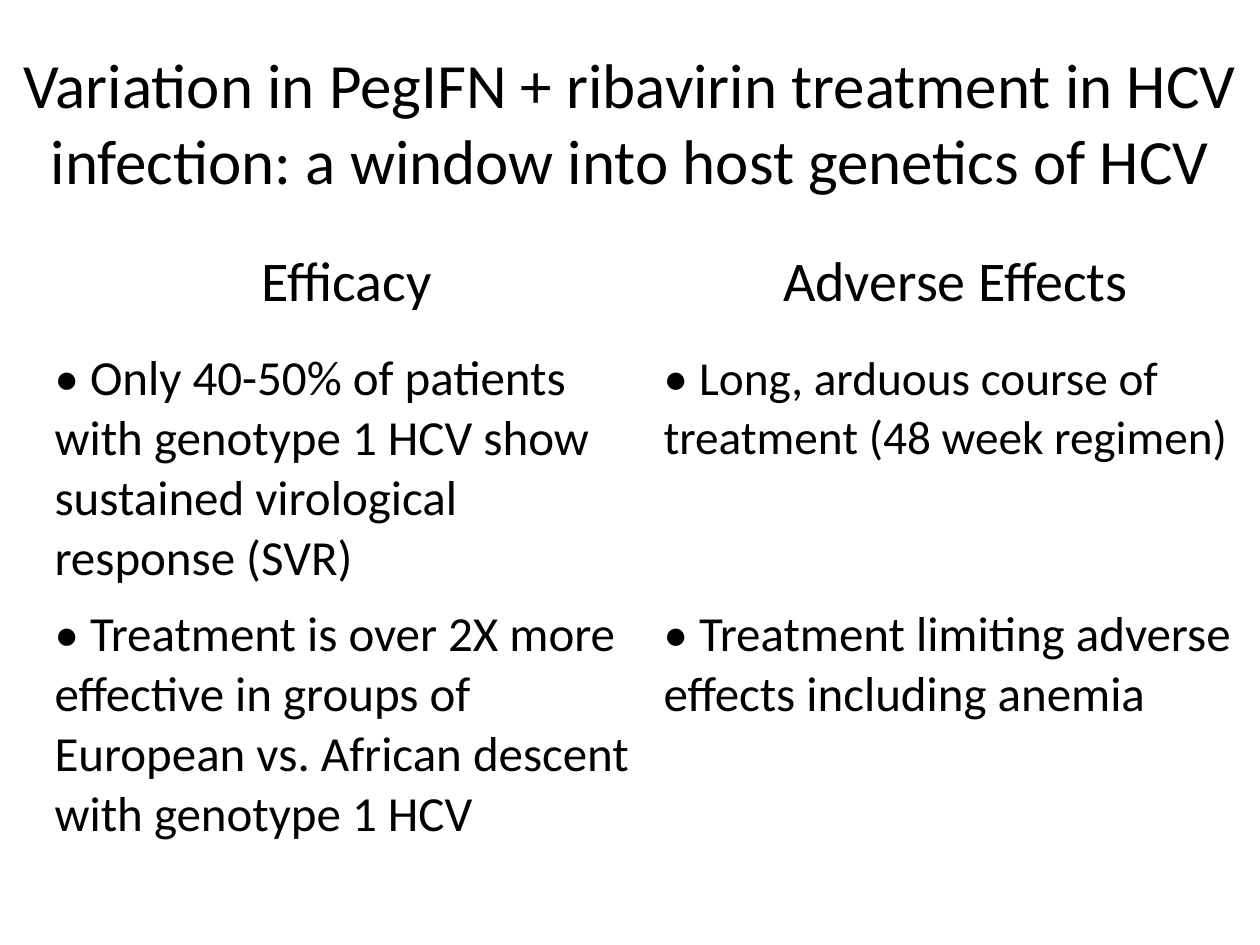
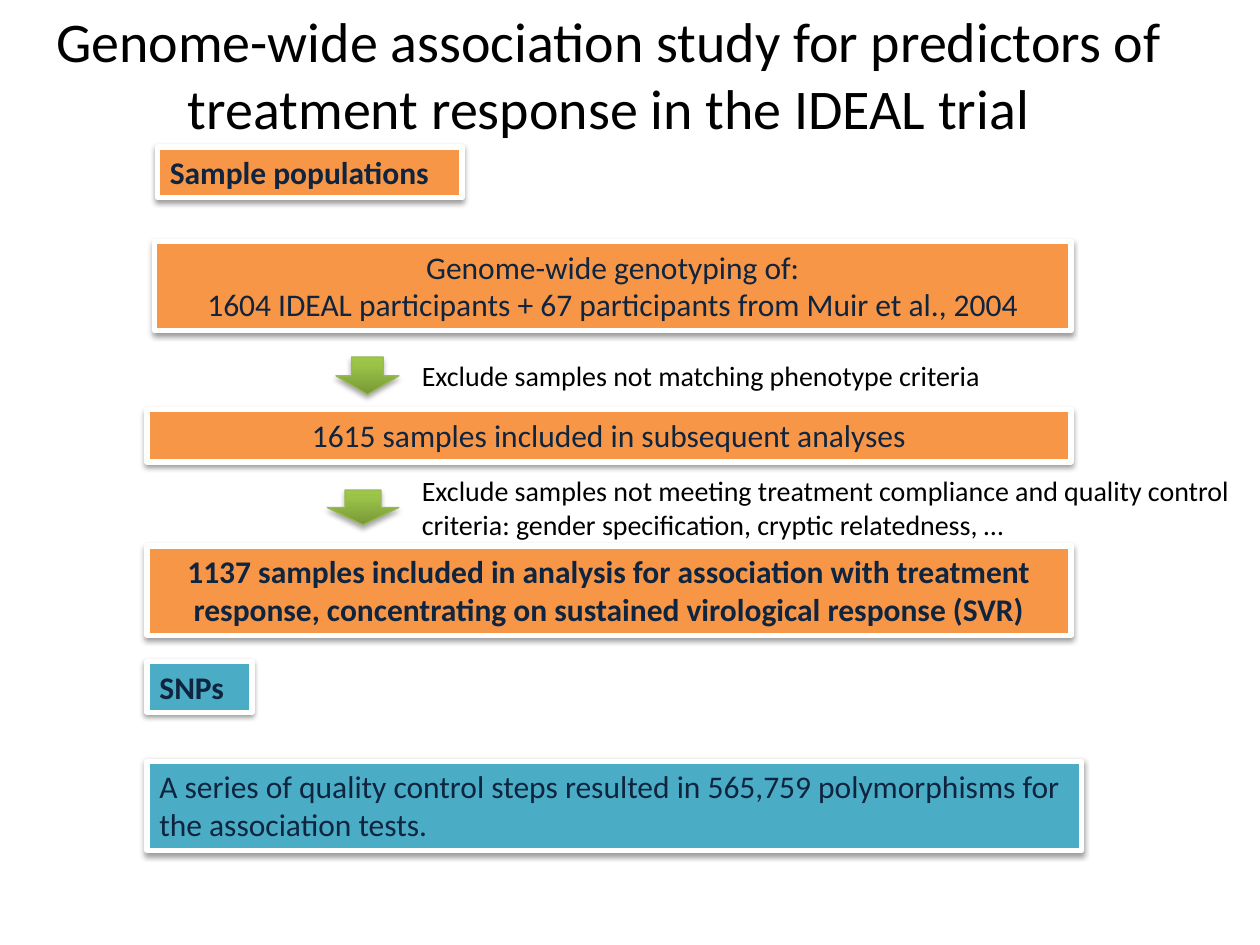
import copy
from typing import NamedTuple

import lxml.etree
import pptx
import pptx.dml.color
import pptx.enum.shapes
import pptx.enum.text
import pptx.oxml.ns
import pptx.util
from pptx.util import Pt

FONT = "Calibri"
BLACK, WHITE, NAVY = "000000", "FFFFFF", "0F243E"
ORANGE, TEAL = "F79646", "4BACC6"
ARROW_LINE = "98B955"
ARROW_STOPS = ((0, "779737"), (0.8, "9BC348"), (1, "9DC746"))

LEFT = pptx.enum.text.PP_ALIGN.LEFT
CENTER = pptx.enum.text.PP_ALIGN.CENTER
RECTANGLE = pptx.enum.shapes.MSO_SHAPE.RECTANGLE
DOWN_ARROW = pptx.enum.shapes.MSO_SHAPE.DOWN_ARROW


class Area(NamedTuple):
    left: float
    top: float
    width: float
    height: float

    def lengths(self) -> list[pptx.util.Length]:
        return [Pt(value) for value in self]


class Run(NamedTuple):
    text: str
    size: float
    color: str = BLACK
    bold: bool = False


class Box(NamedTuple):
    area: Area
    fill: str
    lines: tuple[str, ...]
    align: pptx.enum.text.PP_ALIGN = CENTER
    bold: bool = False


class Note(NamedTuple):
    area: Area
    text: str


TREATMENT_ROWS = (
    ([Run("• Only 40-50% of patients with genotype 1 HCV show sustained "
          "virological response (SVR)", 28)],
     [Run("• ", 28), Run("Long, arduous course of treatment (48 week regimen)", 27)]),
    ([Run("• Treatment is over 2X more effective in groups of European vs. "
          "African descent with genotype 1 HCV", 28)],
     [Run("• Treatment limiting adverse effects including anemia", 28)]),
)

STUDY_BOXES = (
    Box(Area(90, 84, 174, 29), ORANGE, ("Sample populations",), LEFT, True),
    Box(Area(88.5, 138, 523.5, 51), ORANGE,
        ("Genome-wide genotyping of:",
         "1604 IDEAL participants + 67 participants from Muir et al., 2004")),
    Box(Area(84, 234, 528, 30), ORANGE, ("1615 samples included in subsequent analyses",)),
    Box(Area(84, 312, 528, 51), ORANGE,
        ("1137 samples included in analysis for association with treatment response, "
         "concentrating on sustained virological response (SVR)",), bold=True),
    Box(Area(84, 378, 60, 29), TEAL, ("SNPs",), LEFT, True),
    Box(Area(84, 435, 534, 51), TEAL,
        ("A series of quality control steps resulted in 565,759 polymorphisms "
         "for the association tests.",), LEFT),
)

EXCLUSION_ARROWS = (Area(192, 204, 36, 21.5), Area(187, 280, 41, 20))
EXCLUSION_NOTES = (
    Note(Area(234, 201.5, 396, 27), "Exclude samples not matching phenotype criteria"),
    Note(Area(234, 267, 486, 46),
         "Exclude samples not meeting treatment compliance and quality control "
         "criteria: gender specification, cryptic relatedness, …"),
)


def rgb(color: str) -> pptx.dml.color.RGBColor:
    return pptx.dml.color.RGBColor.from_string(color)


def write_paragraphs(text_frame, paragraphs: list[list[Run]], align) -> None:
    text_frame.word_wrap = True
    text_frame.vertical_anchor = pptx.enum.text.MSO_ANCHOR.TOP
    for index, runs in enumerate(paragraphs):
        paragraph = text_frame.add_paragraph() if index else text_frame.paragraphs[0]
        paragraph.alignment = align
        for item in runs:
            run = paragraph.add_run()
            run.text = item.text
            run.font.name = FONT
            run.font.size = Pt(item.size)
            run.font.bold = item.bold
            run.font.color.rgb = rgb(item.color)


def add_text(slide, area: Area, text: str, size: float, align=LEFT) -> None:
    text_box = slide.shapes.add_textbox(*area.lengths())
    write_paragraphs(text_box.text_frame, [[Run(text, size)]], align)


def add_title(slide, area: Area, text: str, size: float) -> None:
    add_text(slide, area, text, size, CENTER)


def add_drop_shadow(shape, opacity: int, distance: float) -> None:
    """Cast a soft black shadow straight down; opacity is in percent."""
    shape.shadow.inherit = False
    qn = pptx.oxml.ns.qn
    effects = shape.element.spPr.find(qn("a:effectLst"))
    shadow = lxml.etree.SubElement(
        effects, qn("a:outerShdw"), blurRad=str(Pt(3.1)), dist=str(Pt(distance)),
        dir="5400000", rotWithShape="0")
    color = lxml.etree.SubElement(shadow, qn("a:srgbClr"), val=BLACK)
    lxml.etree.SubElement(color, qn("a:alpha"), val=str(opacity * 1000))


def add_outlined_shape(slide, kind, area: Area, line_color: str, line_width: float):
    shape = slide.shapes.add_shape(kind, *area.lengths())
    shape.line.color.rgb = rgb(line_color)
    shape.line.width = Pt(line_width)
    return shape


def add_box(slide, box: Box) -> None:
    shape = add_outlined_shape(slide, RECTANGLE, box.area, WHITE, 3)
    shape.fill.solid()
    shape.fill.fore_color.rgb = rgb(box.fill)
    add_drop_shadow(shape, 38, 1.6)
    paragraphs = [[Run(line, 18, NAVY, box.bold)] for line in box.lines]
    write_paragraphs(shape.text_frame, paragraphs, box.align)


def add_arrow(slide, area: Area) -> None:
    shape = add_outlined_shape(slide, DOWN_ARROW, area, ARROW_LINE, 0.75)
    shape.fill.gradient()
    shape.fill.gradient_angle = 90
    stop_list = shape.element.spPr.find(".//" + pptx.oxml.ns.qn("a:gsLst"))
    stop_list.append(copy.deepcopy(stop_list[0]))
    for stop, (position, color) in zip(shape.fill.gradient_stops, ARROW_STOPS):
        stop.position = position
        stop.color.rgb = rgb(color)
    add_drop_shadow(shape, 35, 1.8)


def add_treatment_table(slide) -> None:
    area = Area(24, 138, 696, 384)
    table = slide.shapes.add_table(3, 2, *area.lengths()).table
    table.first_row = False
    table.horz_banding = False
    for row, height in zip(table.rows, (58, 146, 180)):
        row.height = Pt(height)
    headings = ([Run("Efficacy", 32)], [Run("Adverse Effects", 32)])
    for row_index, row in enumerate((headings, *TREATMENT_ROWS)):
        for column_index, runs in enumerate(row):
            cell = table.cell(row_index, column_index)
            cell.fill.background()
            write_paragraphs(cell.text_frame, [runs], LEFT if row_index else CENTER)


def build_treatment_slide(slide) -> None:
    add_title(slide, Area(0, 22.5, 720, 116),
              "Variation in PegIFN + ribavirin treatment in HCV infection: "
              "a window into host genetics of HCV", 36)
    add_treatment_table(slide)


def build_study_slide(slide) -> None:
    add_title(slide, Area(-12, 0, 720, 72),
              "Genome-wide association study for predictors of treatment response "
              "in the IDEAL trial", 32)
    for box in STUDY_BOXES:
        add_box(slide, box)
    for area in EXCLUSION_ARROWS:
        add_arrow(slide, area)
    for note in EXCLUSION_NOTES:
        add_text(slide, note.area, note.text, 16)


def main() -> None:
    presentation = pptx.Presentation()
    presentation.slide_width = Pt(720)
    presentation.slide_height = Pt(540)
    blank_layout = presentation.slide_layouts[6]
    for build in (build_treatment_slide, build_study_slide):
        build(presentation.slides.add_slide(blank_layout))
    presentation.save("out.pptx")


if __name__ == "__main__":
    main()
